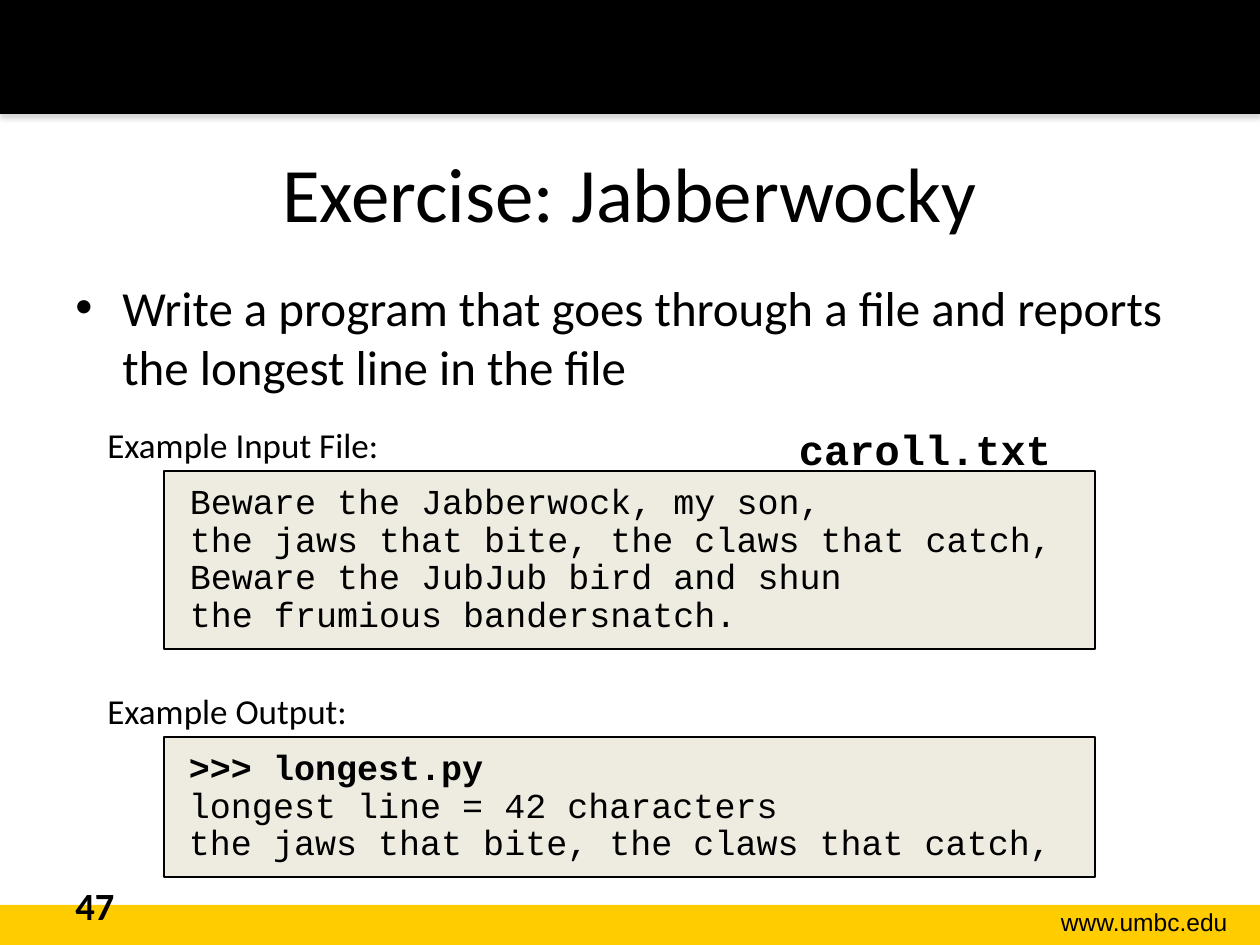
from pptx import Presentation
from pptx.dml.color import RGBColor
from pptx.enum.shapes import MSO_SHAPE
from pptx.enum.text import MSO_ANCHOR, PP_ALIGN
from pptx.oxml import parse_xml
from pptx.oxml.ns import nsdecls
from pptx.util import Pt

RECT = MSO_SHAPE.RECTANGLE
TOP, MIDDLE = MSO_ANCHOR.TOP, MSO_ANCHOR.MIDDLE
LEFT, CENTER, RIGHT = PP_ALIGN.LEFT, PP_ALIGN.CENTER, PP_ALIGN.RIGHT
EMU_PER_PX = 9144000 / 1260


class Theme:
    ink = RGBColor(0x00, 0x00, 0x00)
    gold = RGBColor(0xFF, 0xCC, 0x00)
    panel = RGBColor(0xEE, 0xEC, 0xE1)
    shadow = "808080"
    sans, mono, footer_font = "Calibri", "Courier New", "Arial"
    title, body, file_name, number, small, footer = 44, 28, 24, 22, 20, 14


def px(value):
    return round(value * EMU_PER_PX)


def add_block(box, lines, size, font=Theme.sans, bold_lines=0, align=LEFT,
              anchor=TOP, wrap=True, filled=None, bordered=False):
    """Add text lines at box (px), in a rectangle when a fill is given."""
    place = [px(v) for v in box]
    if filled is None:
        block = slide.shapes.add_textbox(*place)
    else:
        block = slide.shapes.add_shape(RECT, *place)
        block.shadow.inherit = False
        block.fill.solid()
        block.fill.fore_color.rgb = filled
        if bordered:
            block.line.color.rgb = Theme.ink
            block.line.width = Pt(0.75)
        else:
            block.line.fill.background()
    frame = block.text_frame
    frame.word_wrap = wrap
    frame.vertical_anchor = anchor
    frame.text = "\n".join(lines)
    for index, paragraph in enumerate(frame.paragraphs):
        paragraph.alignment = align
        for run in paragraph.runs:
            run.font.name = font
            run.font.size = Pt(size)
            run.font.bold = index < bold_lines
            run.font.color.rgb = Theme.ink
    return block


prs = Presentation()
prs.slide_width, prs.slide_height = px(1260), px(945)
slide = prs.slides.add_slide(prs.slide_layouts[6])

# Footer and header bands
add_block((0, 905, 1260, 40), [], Theme.footer, filled=Theme.gold)
header = add_block((0, 0, 1260, 114), [], Theme.footer, filled=Theme.ink)
header.shadow.inherit = True
header._element.spPr.append(parse_xml(
    f'<a:effectLst {nsdecls("a")}>'
    f'<a:outerShdw blurRad="{Pt(3.1)}" dist="{Pt(1.8)}" dir="5400000" rotWithShape="0">'
    f'<a:srgbClr val="{Theme.shadow}"><a:alpha val="35000"/></a:srgbClr>'
    '</a:outerShdw></a:effectLst>'))
add_block((989, 901, 251, 43), ["www.umbc.edu"], Theme.footer,
          font=Theme.footer_font, align=RIGHT)

# Title
add_block((63, 113, 1134, 158), ["Exercise: Jabberwocky"], Theme.title,
          align=CENTER, anchor=MIDDLE)

# Task bullet
task = add_block(
    (63, 271, 1134, 573),
    ["Write a program that goes through a file and reports the longest line in the file"],
    Theme.body)
bullet = task.text_frame.paragraphs[0]._p.get_or_add_pPr()
bullet.set("marL", str(px(47)))
bullet.set("indent", str(-px(47)))
bullet.append(parse_xml(f'<a:buFont {nsdecls("a")} typeface="Arial"/>'))
bullet.append(parse_xml(f'<a:buChar {nsdecls("a")} char="•"/>'))

# Slide number
add_block((63, 876, 294, 50), ["47"], Theme.number, bold_lines=1)

# Example panels with their labels: label, top, height, lines, bold lines, indent
examples = [
    ("Example Output:", 737, 140,
     [">>> longest.py",
      "longest line = 42 characters",
      "the jaws that bite, the claws that catch,"], 1, 0),
    ("Example Input File:", 471, 178,
     ["Beware the Jabberwock, my son,",
      "the jaws that bite, the claws that catch,",
      "Beware the JubJub bird and shun",
      "the frumious bandersnatch."], 0, 1),
]
for label, top, height, lines, bold_lines, indent in examples:
    panel = add_block((164, top, 931, height), lines, Theme.small, font=Theme.mono,
                      bold_lines=bold_lines, filled=Theme.panel, bordered=True)
    frame = panel.text_frame
    frame.margin_left = frame.margin_right = px(25)
    frame.margin_top = frame.margin_bottom = px(13)
    for paragraph in frame.paragraphs:
        paragraph.line_spacing = 0.9
        paragraph._p.get_or_add_pPr().set("marL", str(px(indent)))
    add_block((95, top - 54, 329, 55), [label], Theme.small, wrap=False)

# Input file name
add_block((777, 417, 296, 63), ["caroll.txt"], Theme.file_name, font=Theme.mono,
          bold_lines=1, align=CENTER)

prs.save("out.pptx")
